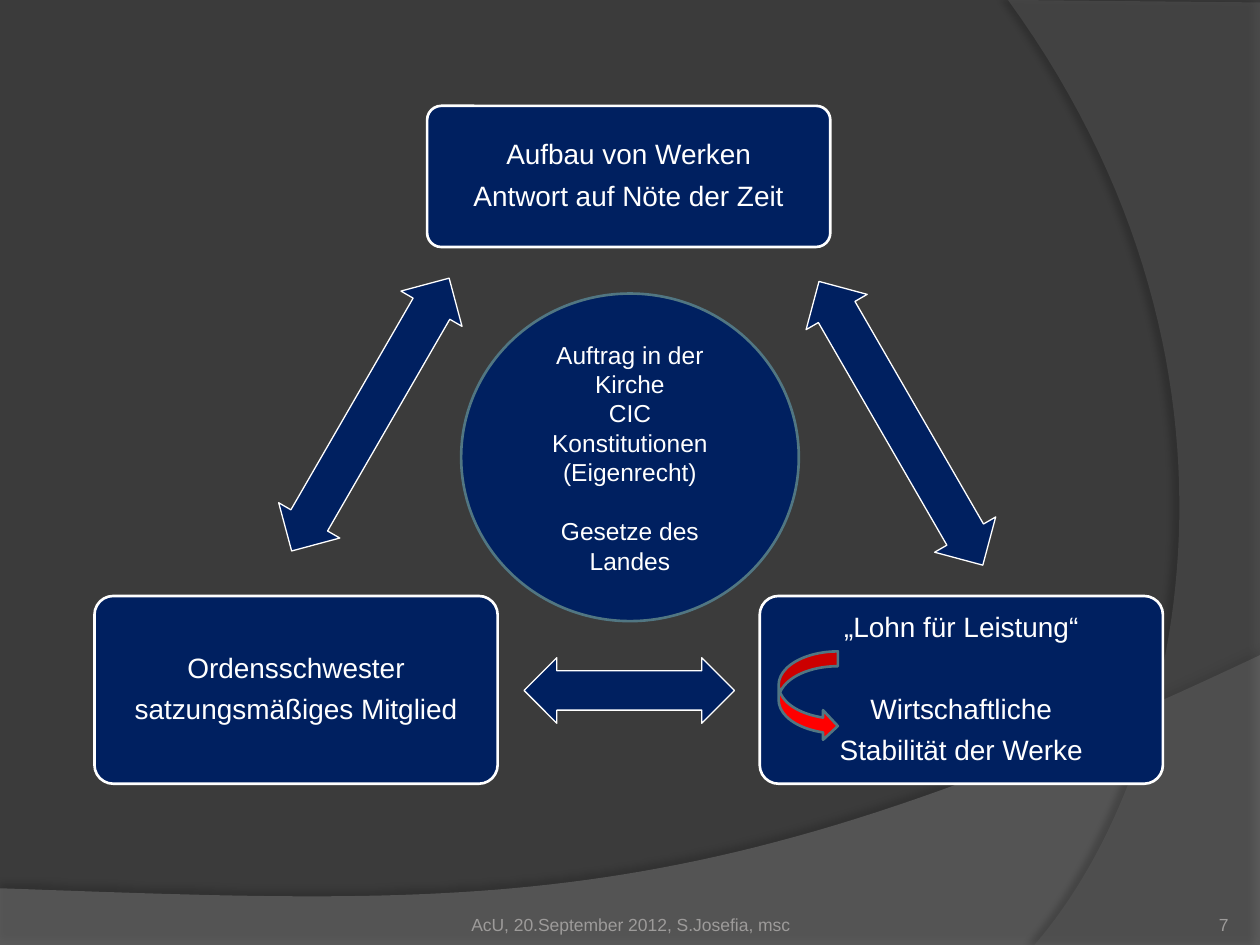
from lxml.etree import SubElement
from pptx import Presentation
from pptx.dml.color import RGBColor
from pptx.enum.shapes import MSO_SHAPE
from pptx.enum.text import MSO_ANCHOR, PP_ALIGN
from pptx.oxml.ns import qn
from pptx.util import Inches, Pt

DARK = RGBColor(0x3B, 0x3B, 0x3B)
SWEEP = RGBColor(0x7F, 0x7F, 0x7F)
EDGE = RGBColor(0x5E, 0x5E, 0x5E)
NAVY = RGBColor(0x00, 0x20, 0x60)
WHITE = RGBColor(0xFF, 0xFF, 0xFF)
TEAL = RGBColor(0x51, 0x76, 0x82)
RED = RGBColor(0xFF, 0x00, 0x00)
MUTED = RGBColor(0x9D, 0x9B, 0x9A)


def curve(a, b, c, d, steps=60):
    """Points on a cubic curve from a to d."""
    for i in range(1, steps + 1):
        t = i / steps
        u = 1 - t
        yield tuple(u**3 * p + 3 * u * u * t * q + 3 * u * t * t * r + t**3 * s
                    for p, q, r, s in zip(a, b, c, d))


def add_wave(slide, points, color, alpha, shade, angle):
    """Translucent background area with a soft shadow."""
    first, *rest = [(Inches(x), Inches(y)) for x, y in points]
    pen = slide.shapes.build_freeform(*first)
    pen.add_line_segments(rest, close=True)
    wave = pen.convert_to_shape()
    wave.fill.solid()
    wave.fill.fore_color.rgb = color
    wave.line.fill.background()
    wave.shadow.inherit = False
    props = wave.element.spPr
    tint = props.find(qn("a:solidFill"))[0]
    SubElement(tint, qn("a:alpha"), val=str(alpha * 1000))
    glow = SubElement(props.find(qn("a:effectLst")), qn("a:outerShdw"),
                      blurRad=str(Pt(4)), dist=str(Pt(4)),
                      dir=str(angle * 60000), algn="ctr", rotWithShape="0")
    black = SubElement(glow, qn("a:srgbClr"), val="000000")
    SubElement(black, qn("a:alpha"), val=str(shade * 1000))


def add_backdrop(slide, width, height):
    slide.background.fill.solid()
    slide.background.fill.fore_color.rgb = DARK
    low = curve((width, 5.2), (5.59, 7.29), (3.91, 7.19), (0, 7.05))
    add_wave(slide, [(0, height), (width, height), (width, 5.2), *low],
             SWEEP, 45, 35, 270)
    side = curve((8.21, height), (9.35, 6.19), (10.18, 3), (8, 0))
    add_wave(slide, [(width, 0.02), (width, height), (8.21, height), *side],
             EDGE, 40, 45, 180)


def add_form(slide, kind, box, line, weight, fill=NAVY):
    form = slide.shapes.add_shape(kind, *map(Inches, box))
    form.shadow.inherit = False
    form.fill.solid()
    form.fill.fore_color.rgb = fill
    form.line.color.rgb = line
    form.line.width = Pt(weight)
    return form


def add_lines(form, lines, size, color=WHITE, align=PP_ALIGN.CENTER,
              anchor=MSO_ANCHOR.MIDDLE, spacing=None):
    """Fill a frame with (text, space before) paragraphs."""
    frame = form.text_frame
    frame.word_wrap = True
    frame.vertical_anchor = anchor
    for i, (text, gap) in enumerate(lines):
        para = frame.add_paragraph() if i else frame.paragraphs[0]
        para.text = text
        para.alignment = align
        para.space_before = Pt(gap)
        para.line_spacing = spacing
        para.font.name = "Arial"
        para.font.size = Pt(size)
        para.font.color.rgb = color


def add_card(slide, box, lines):
    card = add_form(slide, MSO_SHAPE.ROUNDED_RECTANGLE, box, WHITE, 1.5)
    card.adjustments[0] = 0.1
    add_lines(card, lines, 16, spacing=0.9)


def add_arrow(slide, box, turn=0):
    arrow = add_form(slide, MSO_SHAPE.LEFT_RIGHT_ARROW, box, WHITE, 0.75)
    arrow.adjustments[0] = 0.6
    arrow.adjustments[1] = 0.5
    arrow.rotation = turn


def add_cycle(slide, left, top, width, height):
    """Three cards in a triangle, joined by arrows around a circle."""
    wide, tall = 3.2, 1.49
    low = top + height - tall
    right = left + width - wide
    add_card(slide, (left + (width - wide) / 2, top, wide, 1.12),
             [("Aufbau von Werken", 0), ("Antwort auf Nöte der Zeit", 6.5)])
    add_card(slide, (right, low, wide, tall),
             [("„Lohn für Leistung“", 0), ("Wirtschaftliche", 29.5),
              ("Stabilität der Werke", 6.5)])
    add_card(slide, (left, low, wide, tall),
             [("Ordensschwester", 0), ("satzungsmäßiges Mitglied", 6.5)])

    # Arrows between the cards
    add_arrow(slide, (left + 5.1, top + 2.24, 2.6, 0.56), 60)
    add_arrow(slide, (left + 3.41, top + 4.38, 1.67, 0.52))
    add_arrow(slide, (left + 0.94, top + 2.17, 2.5, 0.56), 300)

    # Centre
    hub = add_form(slide, MSO_SHAPE.OVAL,
                   (left + 2.91, top + 1.49, 2.68, 2.6), TEAL, 1.5)
    add_lines(hub, [("Auftrag in der Kirche", 0), ("CIC", 0),
                    ("Konstitutionen (Eigenrecht)", 0),
                    ("Gesetze des Landes", 16.8)], 14)

    # Red turn inside the right card
    add_form(slide, MSO_SHAPE.CURVED_RIGHT_ARROW,
             (right + 0.15, low + 0.44, 0.47, 0.71), TEAL, 1.5, RED)


def add_footer(slide, left, top, width, height):
    number = 0.83
    parts = [
        ("AcU, 20.September 2012, S.Josefia, msc", left, 3.17, PP_ALIGN.CENTER),
        ("7", left + width - number, number, PP_ALIGN.RIGHT),
    ]
    for text, start, span, align in parts:
        note = slide.shapes.add_textbox(*map(Inches, (start, top, span, height)))
        frame = note.text_frame
        frame.margin_left = frame.margin_right = 0
        frame.margin_top = frame.margin_bottom = 0
        add_lines(note, [(text, 0)], 10, MUTED, align, MSO_ANCHOR.BOTTOM)


def main():
    deck = Presentation()
    deck.slide_width = Inches(10)
    deck.slide_height = Inches(7.5)
    slide = deck.slides.add_slide(deck.slide_layouts[6])
    add_backdrop(slide, 10, 7.5)
    add_cycle(slide, 0.75, 0.84, 8.48, 5.38)
    add_footer(slide, 3.42, 7.02, 6.33, 0.4)
    deck.save("out.pptx")


if __name__ == "__main__":
    main()
